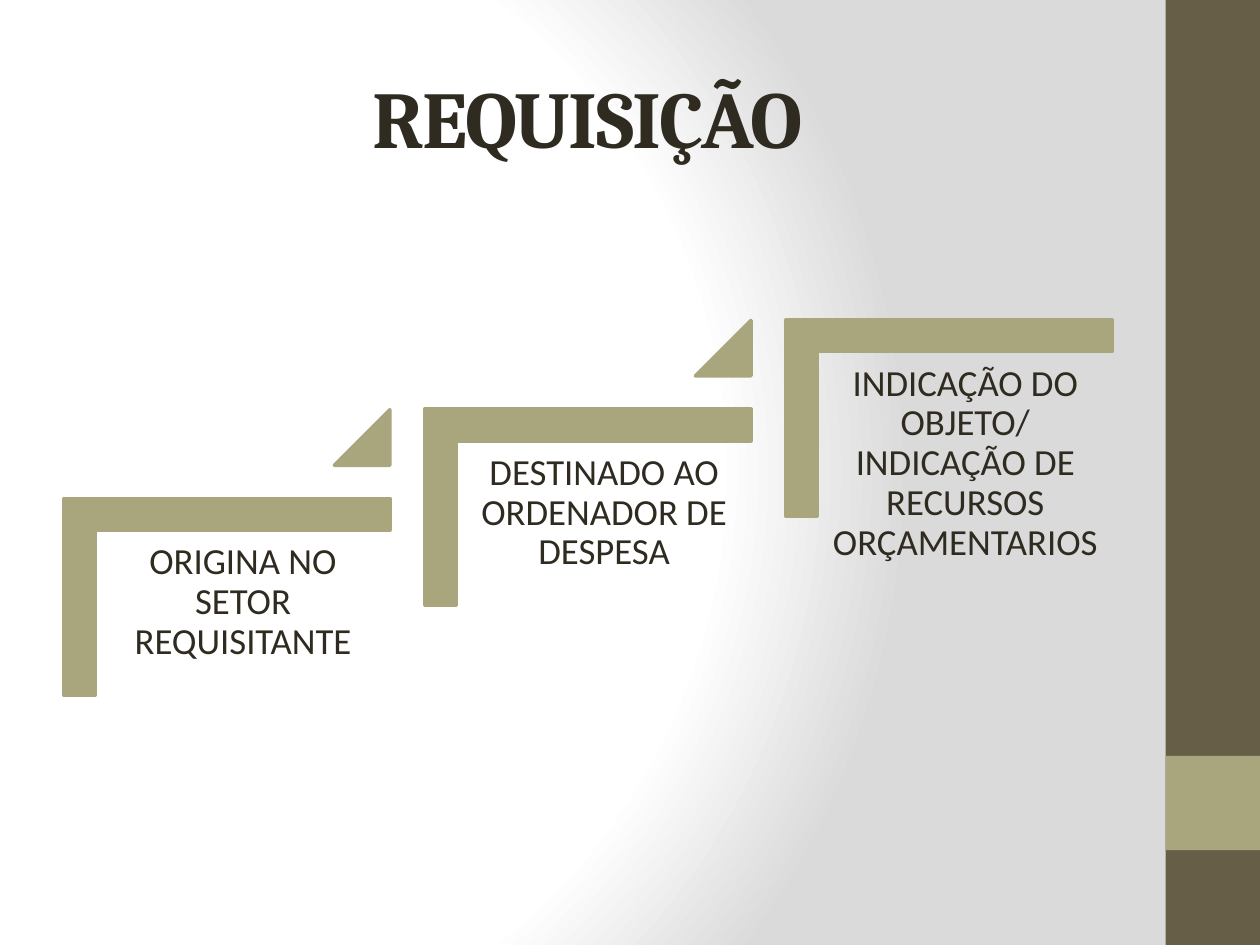
from pptx import Presentation
from pptx.dml.color import RGBColor
from pptx.enum.shapes import MSO_SHAPE as Shape
from pptx.enum.text import MSO_ANCHOR as Anchor, PP_ALIGN as Align
from pptx.oxml import parse_xml
from pptx.oxml.ns import qn
from pptx.util import Cm, Pt

DARK, OLIVE, INK = "675E47", "A9A57C", "2F2B20"
STEPS = [
    "ORIGINA NO SETOR REQUISITANTE",
    "DESTINADO AO ORDENADOR DE DESPESA",
    "INDICAÇÃO DO OBJETO/ INDICAÇÃO DE RECURSOS ORÇAMENTARIOS",
]
GRADIENT = [(0, "FFFFFF"), (75, "FFFFFF"), (100, "DADADA")]
NAMESPACE = "http://schemas.openxmlformats.org/drawingml/2006/main"


def color(value):
    return RGBColor.from_string(value)


def set_values(target, values):
    for name, value in values.items():
        setattr(target, name, value)


def add_block(slide, kind, box, fill, line_width=None):
    shape = slide.shapes.add_shape(kind, *map(Cm, box))
    shape.shadow.inherit = False
    shape.fill.solid()
    shape.fill.fore_color.rgb = color(fill)
    if line_width:
        shape.line.color.rgb = color(fill)
        shape.line.width = Pt(line_width)
    else:
        shape.line.fill.background()
    return shape


def add_text(slide, box, text, font, frame_format, line_spacing=1):
    frame = slide.shapes.add_textbox(*map(Cm, box)).text_frame
    set_values(frame, {"word_wrap": True, **frame_format})
    paragraph = frame.paragraphs[0]
    set_values(paragraph, {"alignment": Align.CENTER, "line_spacing": line_spacing})
    run = paragraph.add_run()
    run.text = text
    set_values(run.font, font)
    run.font.color.rgb = color(INK)
    return run


def add_background(slide):
    slide.background.fill.gradient()
    gradient = next(slide.element.iter(qn("a:gradFill")))
    stops = "".join(
        f'<a:gs pos="{position * 1000}"><a:srgbClr val="{value}"/></a:gs>'
        for position, value in GRADIENT
    )
    new_gradient = parse_xml(
        f'<a:gradFill xmlns:a="{NAMESPACE}" rotWithShape="1"><a:gsLst>{stops}</a:gsLst>'
        '<a:path path="circle">'
        '<a:fillToRect l="20000" t="50000" r="100000" b="50000"/>'
        "</a:path></a:gradFill>"
    )
    gradient.getparent().replace(gradient, new_gradient)


def add_sidebar(slide, left, top, width, height):
    add_block(slide, Shape.RECTANGLE, (left, top, width, height), DARK)
    add_block(slide, Shape.RECTANGLE, (left, top + 0.8 * height, width, width), OLIVE)


def add_title(slide, left, top, width, height):
    font = {"name": "Cambria", "size": Pt(46), "bold": True}
    frame_format = {"vertical_anchor": Anchor.MIDDLE}
    run = add_text(slide, (left, top, width, height), "REQUISIÇÃO", font, frame_format)
    run._r.get_or_add_rPr().set("spc", "-100")


def add_step(slide, left, top, width, height, text, has_next):
    inset = (width - height) / 2
    corner_box = (left + inset, top - inset, height, width)
    corner = add_block(slide, Shape.CORNER, corner_box, OLIVE, 2)
    corner.rotation = 90
    corner.adjustments[0] = corner.adjustments[1] = 0.161

    margins = ("margin_left", "margin_top", "margin_right", "margin_bottom")
    add_text(
        slide,
        (left + 0.65, top + 0.67, width - 0.64, 5.21),
        text,
        {"name": "Calibri", "size": Pt(21)},
        dict.fromkeys(margins, Cm(0.23)),
        line_spacing=0.9,
    )

    if has_next:
        side = 1.12
        triangle_box = (left + width - side, top - 1.79, side, side)
        triangle = add_block(slide, Shape.ISOSCELES_TRIANGLE, triangle_box, OLIVE, 2)
        triangle.adjustments[0] = 1


def add_staircase(slide, left, bottom_step_top, step_width, step_height):
    for index, text in enumerate(STEPS):
        step_left = left + index * 7.28
        step_top = bottom_step_top - index * 1.8
        has_next = index < len(STEPS) - 1
        add_step(slide, step_left, step_top, step_width, step_height, text, has_next)


def main():
    presentation = Presentation()
    set_values(presentation, {"slide_width": Cm(25.4), "slide_height": Cm(19.05)})
    slide = presentation.slides.add_slide(presentation.slide_layouts[6])
    add_background(slide)
    add_sidebar(slide, 23.5, 0, 1.9, 19.05)
    add_title(slide, 1.27, 0.76, 21.16, 3.18)
    add_staircase(slide, 1.28, 10.05, 6.58, 3.96)
    presentation.save("out.pptx")


if __name__ == "__main__":
    main()
